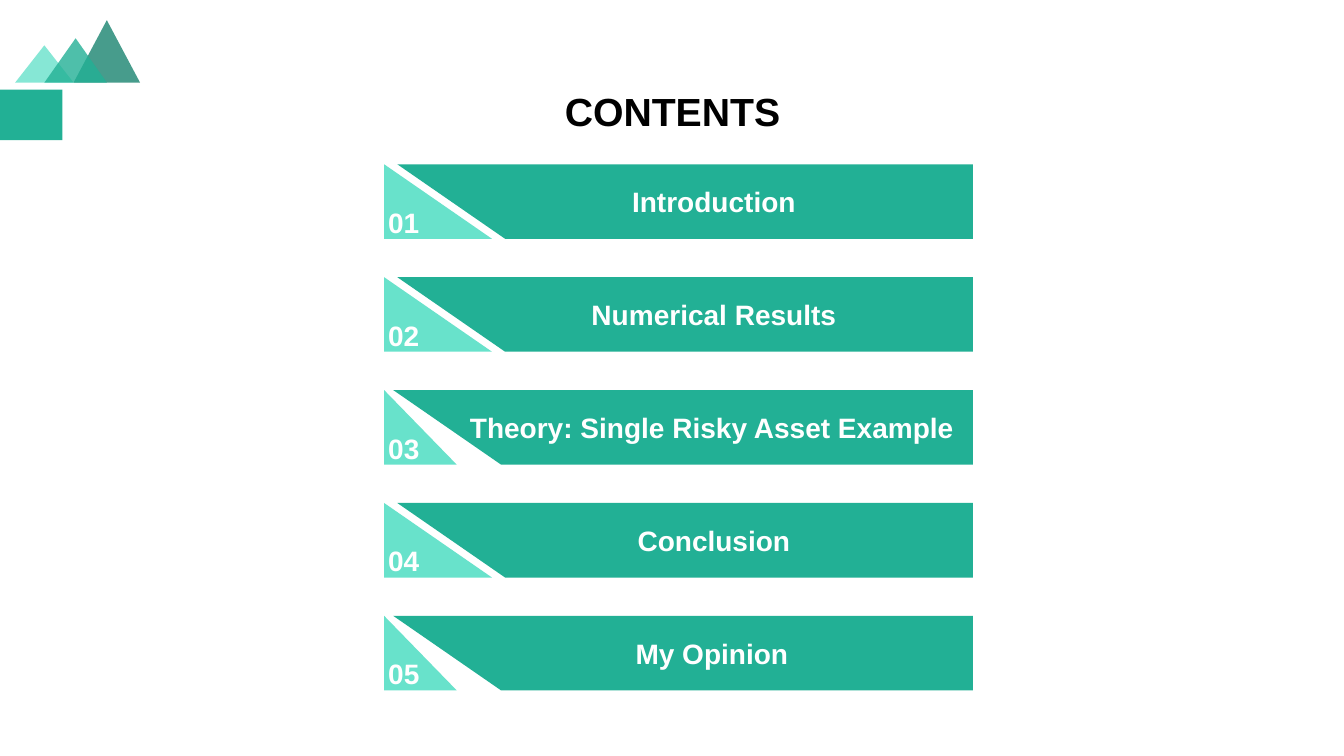
import lxml.etree
import pptx
import pptx.dml.color
import pptx.enum.shapes
import pptx.enum.text
import pptx.oxml.ns
import pptx.util

Inches = pptx.util.Inches
ALIGN = pptx.enum.text.PP_ALIGN
ANCHOR = pptx.enum.text.MSO_ANCHOR
SHAPE = pptx.enum.shapes.MSO_SHAPE

TEAL = pptx.dml.color.RGBColor(0x22, 0xB0, 0x95)
MINT = pptx.dml.color.RGBColor(0x68, 0xE2, 0xCB)
PINE = pptx.dml.color.RGBColor(0x19, 0x84, 0x70)
WHITE = pptx.dml.color.RGBColor(0xFF, 0xFF, 0xFF)
BLACK = pptx.dml.color.RGBColor(0, 0, 0)

FONT = "Arial"
WIDE_CUT = (1.07, 0.13)
NARROW_CUT = (0.72, 0.09)
SLANT = 1.07
ENTRIES = [
    ("Introduction", WIDE_CUT),
    ("Numerical Results", WIDE_CUT),
    ("Theory: Single Risky Asset Example", NARROW_CUT),
    ("Conclusion", WIDE_CUT),
    ("My Opinion", NARROW_CUT),
]


def paint(sp, color, opacity=100):
    """Give a shape a plain fill without line or shadow."""
    sp.shadow.inherit = False
    sp.line.fill.background()
    sp.fill.solid()
    sp.fill.fore_color.rgb = color
    if opacity < 100:
        clr = sp._element.spPr.find(".//" + pptx.oxml.ns.qn("a:srgbClr"))
        alpha = lxml.etree.SubElement(clr, pptx.oxml.ns.qn("a:alpha"))
        alpha.set("val", str(opacity * 1000))


def write(sp, text, size, color, align, anchor, insets):
    """Write one bold line into a shape."""
    tf = sp.text_frame
    tf.word_wrap = True
    tf.vertical_anchor = anchor
    tf.margin_left, tf.margin_top, tf.margin_right, tf.margin_bottom = map(Inches, insets)
    tf.text = text
    p = tf.paragraphs[0]
    p.alignment = align
    font = p.runs[0].font
    font.name, font.size, font.bold = FONT, pptx.util.Pt(size), True
    font.color.rgb = color


def add_polygon(s, points, color):
    """Draw a filled polygon through points in inches."""
    (x, y), *rest = [(Inches(px), Inches(py)) for px, py in points]
    builder = s.shapes.build_freeform(x, y)
    builder.add_line_segments(rest, close=True)
    sp = builder.convert_to_shape()
    paint(sp, color)
    return sp


def add_mountains(s, left, base):
    """Draw three translucent peaks standing on one base line."""
    group = s.shapes.add_group_shape()
    peaks = [(0.58, 0.66, 0.62, PINE), (0, 0.58, 0.37, MINT), (0.29, 0.62, 0.44, TEAL)]
    for dx, width, height, color in peaks:
        sp = group.shapes.add_shape(
            SHAPE.ISOSCELES_TRIANGLE, Inches(left + dx), Inches(base - height),
            Inches(width), Inches(height))
        paint(sp, color, 80)


def add_header(s, left, top, width, height):
    """Place the title and the block at the slide's left edge."""
    block = s.shapes.add_shape(
        SHAPE.RECTANGLE, 0, Inches(0.89), Inches(0.62), Inches(0.5))
    paint(block, TEAL)
    title = s.shapes.title
    title.left, title.top, title.width, title.height = map(
        Inches, (left, top, width, height))
    write(title, "CONTENTS", 28, BLACK, ALIGN.CENTER, ANCHOR.MIDDLE, (0.1, 0.05, 0.1, 0.05))


def add_entry(s, left, top, width, height, number, text, cut):
    """Draw one agenda row: a numbered corner and a slanted bar."""
    corner, gap = cut
    right, bottom, start = left + width, top + height, left + gap
    sp = add_polygon(s, [(left, bottom), (left, top), (left + corner, bottom)], MINT)
    write(sp, f"{number:02d}", 20, WHITE, ALIGN.LEFT, ANCHOR.BOTTOM, (0.04, 0.05, 0.1, 0))
    sp = add_polygon(
        s, [(start, top), (right, top), (right, bottom), (start + SLANT, bottom)], TEAL)
    write(sp, text, 20, WHITE, ALIGN.CENTER, ANCHOR.MIDDLE, (0.67, 0.05, 0.1, 0.05))


def add_agenda(s, left, top, width, height, pitch):
    """Stack the agenda rows at an equal pitch."""
    for i, (text, cut) in enumerate(ENTRIES):
        add_entry(s, left, top + i * pitch, width, height, i + 1, text, cut)


def main():
    """Build and save the contents slide."""
    prs = pptx.Presentation()
    prs.slide_width, prs.slide_height = Inches(13.33), Inches(7.5)
    s = prs.slides.add_slide(prs.slide_layouts[5])
    add_mountains(s, 0.15, 0.82)
    add_header(s, 5.43, 0.81, 2.48, 0.57)
    add_agenda(s, 3.81, 1.63, 5.84, 0.74, 1.12)
    prs.save("out.pptx")


if __name__ == "__main__":
    main()
